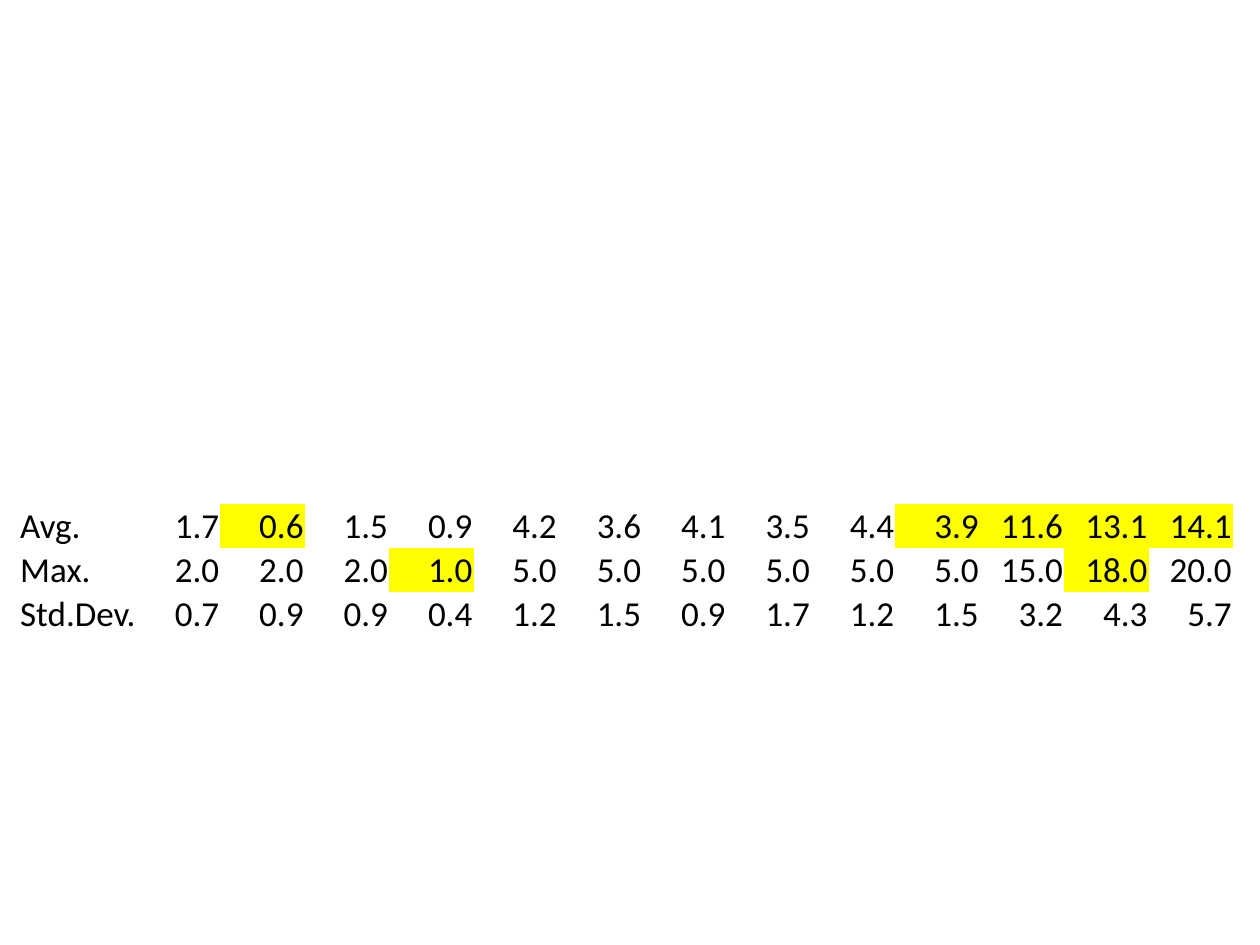
from pptx import Presentation
from pptx.dml.color import RGBColor
from pptx.enum.text import MSO_ANCHOR, PP_ALIGN
from pptx.oxml.ns import qn
from pptx.util import Inches, Pt

ROWS = [
    ("Avg.", [1.7, 0.6, 1.5, 0.9, 4.2, 3.6, 4.1, 3.5, 4.4, 3.9, 11.6, 13.1, 14.1]),
    ("Max.", [2.0, 2.0, 2.0, 1.0, 5.0, 5.0, 5.0, 5.0, 5.0, 5.0, 15.0, 18.0, 20.0]),
    ("Std.Dev.", [0.7, 0.9, 0.9, 0.4, 1.2, 1.5, 0.9, 1.7, 1.2, 1.5, 3.2, 4.3, 5.7]),
]
# Table columns to highlight in each row
MARKS = {"Avg.": {2, 10, 11, 12, 13}, "Max.": {4, 12}, "Std.Dev.": set()}
WIDTHS = [1.07, 0.53] + [0.67] * 12
ROW_HEIGHT = 0.15  # rows grow to fit their text
PLAIN_STYLE = "{2D5ABB26-0587-4C30-8999-92F81FD0307C}"  # no style, no grid
BLACK = RGBColor(0, 0, 0)
YELLOW = RGBColor(255, 255, 0)


def fill_cell(cell, text, align, marked):
    cell.margin_left = cell.margin_right = cell.margin_top = Inches(0.01)
    cell.margin_bottom = 0
    cell.vertical_anchor = MSO_ANCHOR.BOTTOM
    if marked:
        cell.fill.solid()
        cell.fill.fore_color.rgb = YELLOW
    else:
        cell.fill.background()
    cell.text_frame.text = text
    para = cell.text_frame.paragraphs[0]
    para.alignment = align
    font = para.runs[0].font
    font.name, font.size, font.color.rgb = "Calibri", Pt(20), BLACK


def main():
    deck = Presentation()
    deck.slide_width, deck.slide_height = Inches(10), Inches(7.5)
    slide = deck.slides.add_slide(deck.slide_layouts[6])

    frame = slide.shapes.add_table(
        len(ROWS), len(WIDTHS), Inches(0.15), Inches(4),
        Inches(sum(WIDTHS)), Inches(1.03))
    table = frame.table
    table.first_row = table.horz_banding = False
    next(frame.element.iter(qn("a:tableStyleId"))).text = PLAIN_STYLE

    for column, width in zip(table.columns, WIDTHS):
        column.width = Inches(width)
    for row, (label, values) in zip(table.rows, ROWS):
        row.height = Inches(ROW_HEIGHT)
        texts = [label] + [f"{value:.1f}" for value in values]
        for col, (cell, text) in enumerate(zip(row.cells, texts)):
            align = PP_ALIGN.RIGHT if col else PP_ALIGN.LEFT
            fill_cell(cell, text, align, col in MARKS[label])
    frame.height = Inches(1.03)

    deck.save("out.pptx")


if __name__ == "__main__":
    main()
